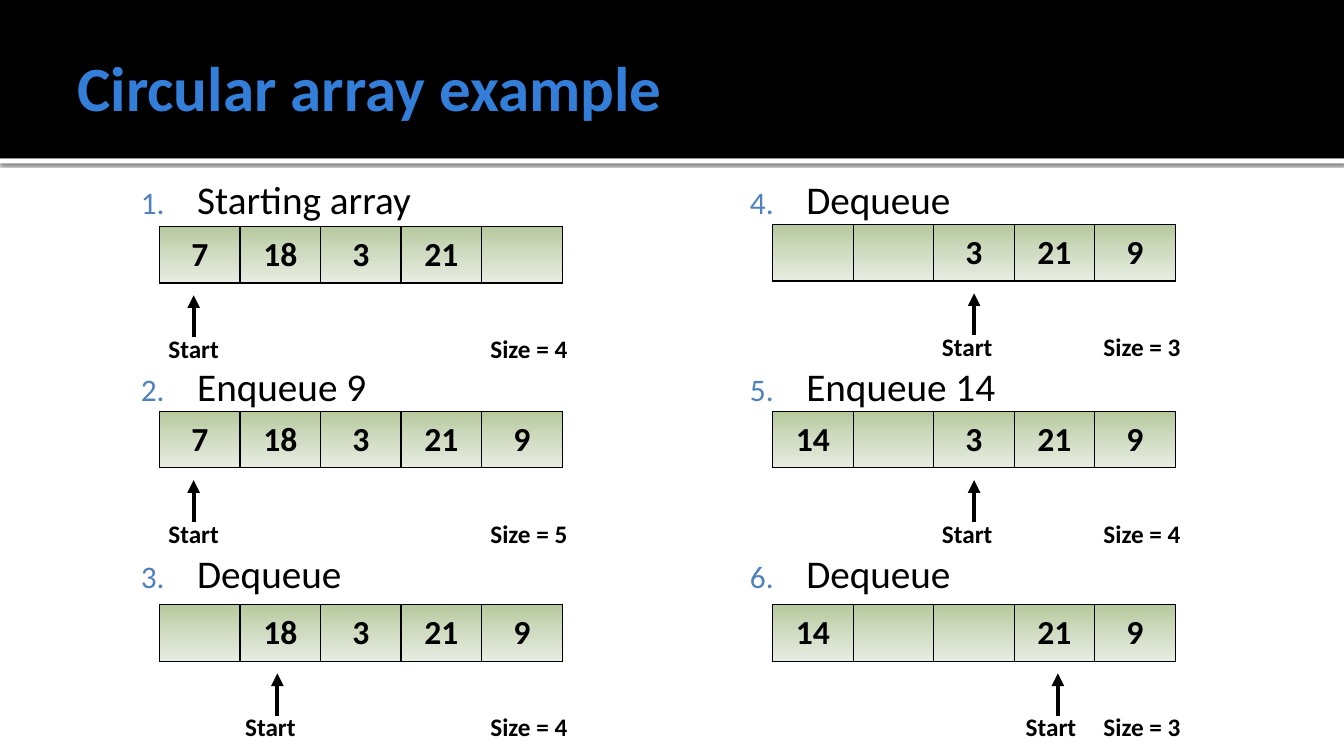
from pptx import Presentation
from pptx.dml.color import RGBColor
from pptx.enum.shapes import MSO_CONNECTOR, MSO_SHAPE
from pptx.enum.text import MSO_ANCHOR, MSO_AUTO_SIZE, PP_ALIGN
from pptx.oxml import parse_xml
from pptx.oxml.ns import nsdecls, qn
from pptx.util import Cm, Pt

LEFT, CENTER = PP_ALIGN.LEFT, PP_ALIGN.CENTER
TOP, MIDDLE = MSO_ANCHOR.TOP, MSO_ANCHOR.MIDDLE
NO_FIT = MSO_AUTO_SIZE.NONE
RECTANGLE, STRAIGHT = MSO_SHAPE.RECTANGLE, MSO_CONNECTOR.STRAIGHT
BLACK = RGBColor(0, 0, 0)

THEME = {
    "band": BLACK,
    "strip": RGBColor(255, 255, 255),
    "line": BLACK,
    "number": "4F81BD",
    "cell": [(0, "B6C99C"), (50, "D1DCC3"), (100, "E8EDE2")],
    "title": {"size": Pt(45), "bold": True, "color": RGBColor(0x33, 0x7E, 0xD9)},
    "step": {"size": Pt(28), "bold": False, "color": BLACK},
    "value": {"size": Pt(24), "bold": True, "color": BLACK},
    "label": {"size": Pt(18), "bold": True, "color": BLACK},
}


def write(para, text, style, align=LEFT):
    """Put one styled run into a paragraph."""
    para.alignment = align
    span = para.add_run()
    span.text = text
    span.font.name = "Calibri"
    span.font.color.rgb = THEME[style]["color"]
    for name in ("size", "bold"):
        setattr(span.font, name, THEME[style][name])


def set_frame(shape, place, frame_format):
    """Place a text shape and format its frame."""
    for name, length in zip(("left", "top", "width", "height"), place):
        setattr(shape, name, Cm(length))
    for name, value in frame_format.items():
        setattr(shape.text_frame, name, value)


deck = Presentation()
deck.slide_width, deck.slide_height = Cm(33.87), Cm(19.05)
page = deck.slides.add_slide(deck.slide_layouts[3])
title, *lists = page.placeholders

# Header: white strip with a shadow, black band, title
for top, height, colour in ((3.99, 0.13, "strip"), (0, 3.99, "band")):
    bar = page.shapes.add_shape(RECTANGLE, 0, Cm(top), deck.slide_width, Cm(height))
    bar.shadow.inherit = False
    bar.fill.solid()
    bar.fill.fore_color.rgb = THEME[colour]
    bar.line.fill.background()
    title.element.addprevious(bar.element)
    if colour == "strip":
        bar.element.spPr.find(qn("a:effectLst")).append(parse_xml(
            f'<a:outerShdw {nsdecls("a")} blurRad="31750" dist="10160" dir="5400000" '
            'algn="tl" rotWithShape="0"><a:srgbClr val="000000">'
            '<a:alpha val="60000"/></a:srgbClr></a:outerShdw>'))

set_frame(title, (1.7, 0.43, 30.48, 3.47), {
    "vertical_anchor": MIDDLE, "auto_size": NO_FIT, "word_wrap": True,
    "margin_left": Cm(0.25), "margin_right": Cm(0.13),
    "margin_top": Cm(0.13), "margin_bottom": Cm(0.13)})
write(title.text_frame.paragraphs[0], "Circular array example", "title")

# Each column: list left, list inset, array left, first number,
# then steps of (name, array top, cells, start cell, size)
columns = [
    (2.97, 0.25, 4.02, 1, [
        ("Starting array", 5.71, ("7", "18", "3", "21", ""), 0, 4),
        ("Enqueue 9", 10.37, ("7", "18", "3", "21", "9"), 0, 5),
        ("Dequeue", 15.24, ("", "18", "3", "21", "9"), 1, 4)]),
    (18.42, 0.15, 19.47, 4, [
        ("Dequeue", 5.66, ("", "", "3", "21", "9"), 2, 3),
        ("Enqueue 14", 10.37, ("14", "", "3", "21", "9"), 2, 4),
        ("Dequeue", 15.24, ("14", "", "", "21", "9"), 3, 3)]),
]
CELL_WIDTH, CELL_HEIGHT = 2.03, 1.42
stops = "".join(f'<a:gs pos="{place * 1000}"><a:srgbClr val="{colour}"/></a:gs>'
                for place, colour in THEME["cell"])

for body, (list_left, inset, array_left, first_number, steps) in zip(lists, columns):
    # Numbered steps
    set_frame(body, (list_left, 4.16, 11.23, 13.87), {
        "vertical_anchor": TOP, "auto_size": NO_FIT, "word_wrap": True,
        "margin_left": Cm(inset), "margin_right": Cm(0.25),
        "margin_top": Cm(0.25), "margin_bottom": Cm(0.13)})
    for index, (name, top, values, start, size) in enumerate(steps):
        frame = body.text_frame
        para = frame.add_paragraph() if index else frame.paragraphs[0]
        para.space_before = Pt(100 if index else 0)
        para.space_after = Pt(0)
        para.line_spacing = 1.0
        properties = para._p.get_or_add_pPr()
        properties.set("marL", str(Cm(1.75)))
        properties.set("indent", str(Cm(-1.42)))
        for bullet in (f'<a:buClr {nsdecls("a")}><a:srgbClr val="{THEME["number"]}"/></a:buClr>',
                       f'<a:buSzPct {nsdecls("a")} val="80000"/>',
                       f'<a:buFont {nsdecls("a")} typeface="Calibri"/>',
                       f'<a:buAutoNum {nsdecls("a")} type="arabicPeriod" startAt="{first_number}"/>'):
            properties.append(parse_xml(bullet))
        write(para, name, "step")

        # Array
        array = page.shapes.add_table(
            1, len(values), Cm(array_left), Cm(top),
            Cm(CELL_WIDTH * len(values)), Cm(CELL_HEIGHT)).table
        array.first_row = array.horz_banding = False
        for cell, value in zip(array.iter_cells(), values):
            cell.vertical_anchor = MIDDLE
            if value:
                write(cell.text_frame.paragraphs[0], value, "value", CENTER)
            cell_properties = cell._tc.get_or_add_tcPr()
            for side in "LRTB":
                cell_properties.append(parse_xml(
                    f'<a:ln{side} {nsdecls("a")} w="12700"><a:solidFill>'
                    f'<a:srgbClr val="{THEME["line"]}"/></a:solidFill></a:ln{side}>'))
            cell_properties.append(parse_xml(
                f'<a:gradFill {nsdecls("a")}><a:gsLst>{stops}</a:gsLst>'
                '<a:lin ang="5400000" scaled="0"/></a:gradFill>'))

        # Arrow to the start cell
        arrow_x = array_left + 0.86 + 2.11 * start
        arrow = page.shapes.add_connector(
            STRAIGHT, Cm(arrow_x), Cm(top + 2.79), Cm(arrow_x), Cm(top + 1.73))
        arrow.line.width = Pt(3)
        arrow.line.color.rgb = THEME["line"]
        arrow.line._get_or_add_ln().append(
            parse_xml(f'<a:tailEnd {nsdecls("a")} type="triangle"/>'))
        arrow.element.spPr.append(parse_xml(f'<a:effectLst {nsdecls("a")}/>'))

        # Start and size labels
        for text, left, width, align in (
                ("Start", arrow_x - 1.06, 2.12, LEFT if start else CENTER),
                (f"Size = {size}", array_left + 7.83, 2.96, CENTER)):
            box = page.shapes.add_textbox(0, 0, 0, 0)
            set_frame(box, (left, top + 2.56, width, 1.02), {"word_wrap": True})
            write(box.text_frame.paragraphs[0], text, "label", align)

deck.save("out.pptx")
